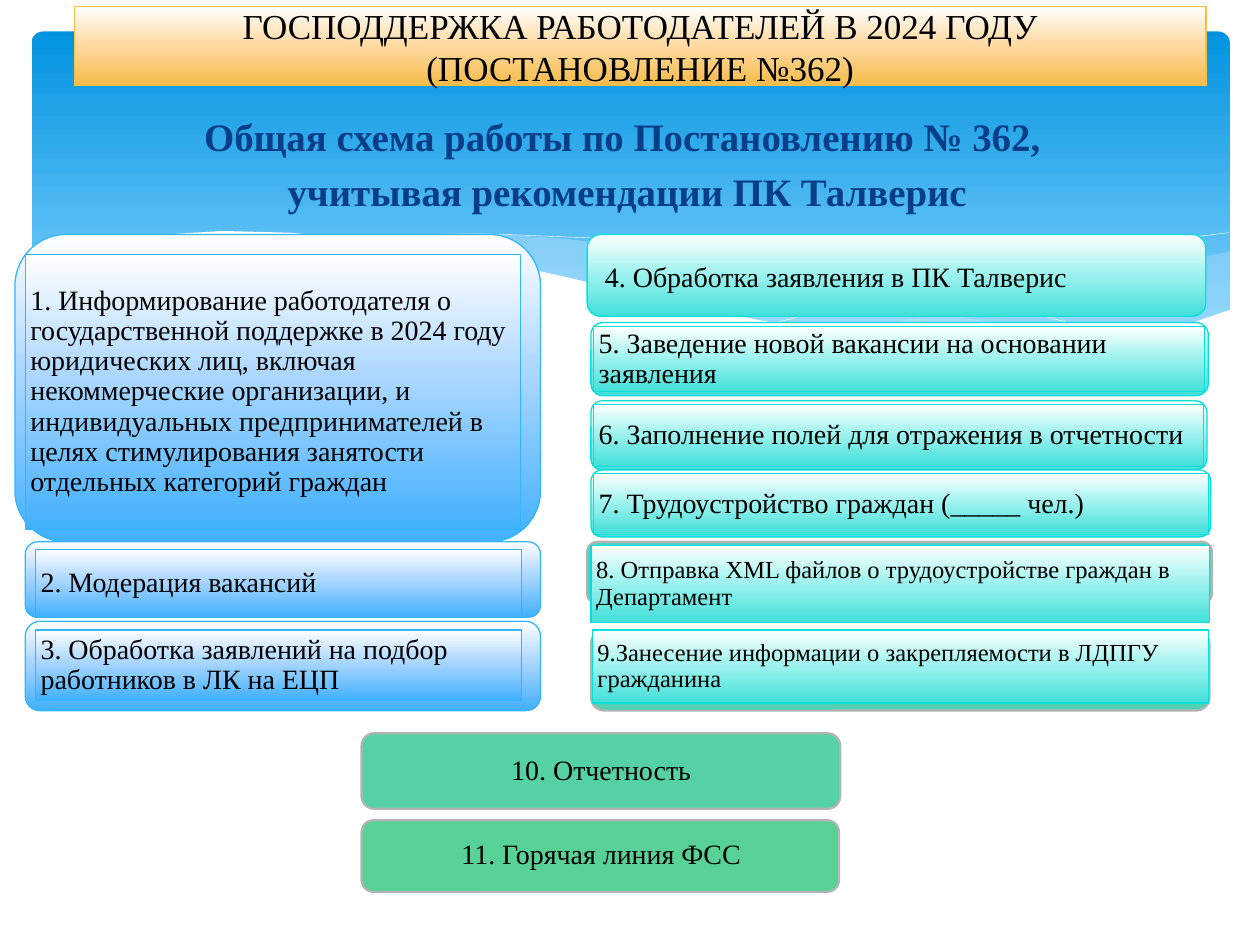
from copy import deepcopy
from dataclasses import dataclass

from pptx import Presentation
from pptx.dml.color import RGBColor
from pptx.enum import shapes as kinds, text as txt
from pptx.oxml import ns, xmlchemy
from pptx.util import Pt


@dataclass(frozen=True)
class Theme:
    font: str = "Times New Roman"
    ink: str = "000000"
    heading: str = "073E87"
    white: str = "FFFFFF"
    haze: str = "C6E7FC"
    sky: tuple = ((0, "0293E0"), (0.9, "83D3FE"))
    gold: tuple = ((0, "FFFFFF"), (0.44, "FFDDAA"), (1, "F4BB4A"))
    blue: tuple = ((0, "FFFFFF"), (0.44, "ACD7FF"), (1, "42B0FD"))
    aqua: tuple = ((0, "FFFFFF"), (0.44, "A5F4F0"), (1, "42DFD9"))
    gold_edge: str = "F5C040"
    blue_edge: str = "31B6FD"
    aqua_edge: str = "05E0DB"
    grey_edge: str = "B4B4B4"
    title_size: float = 20
    heading_size: float = 22.2
    step_size: float = 16
    small_size: float = 14
    thin: float = 0.75
    thick: float = 1.25


T = Theme()
BLUE = (T.blue, T.blue_edge, T.thin)
AQUA = (T.aqua, T.aqua_edge, T.thin)
LEFT, CENTER = txt.PP_ALIGN.LEFT, txt.PP_ALIGN.CENTER

# Backdrop outlines, in points
HAZE_RIGHT = [(702, 144), (662, 151), (620, 161), (561, 174), (508, 185), (476, 191),
              (518, 195), (562, 199.5), (594, 199.5), (628, 198), (657, 194), (678, 187),
              (703, 178), (703, 144)]
HAZE_MIDDLE = [(643, 197), (581, 187), (508, 173), (453, 160), (410, 150), (370, 142.5),
               (318, 136), (274, 133), (236, 134.5), (206, 137.5), (246, 143), (291, 152),
               (323, 160), (382, 173), (433, 184), (479, 191.5), (520, 197), (557, 199.5),
               (597, 200)]
CREST_LONG = [(222, 140), (248, 137), (289, 134.5), (338, 136), (384, 140), (438, 147),
              (500, 158), (572, 173.5), (653, 196)]
CREST_SHORT = [(441, 185), (484, 173.5), (539, 160.5), (602, 147), (644, 140), (702, 133)]
WHITE_WAVE = [(17, 153), (26, 149), (42, 144), (68, 137.5), (95, 134), (127, 132.5),
              (166, 133), (210, 137), (263, 145), (322, 158), (381, 172), (434, 183),
              (481, 191), (523, 196), (560, 199), (593, 199), (621, 197), (647, 193.5),
              (677, 186.5), (703, 177), (703, 237), (17, 237)]

# Steps: card box, card style, label box, label style (None = plain text), text, size, alignment
STEPS = [
    ((8.6, 134, 300.3, 175.6), BLUE, (14.4, 145.4, 283, 157), BLUE,
     "1. Информирование работодателя о государственной поддержке в 2024 году юридических лиц, "
     "включая некоммерческие организации, и индивидуальных предпринимателей в целях "
     "стимулирования занятости отдельных категорий граждан", T.step_size, LEFT),
    ((14.4, 309.6, 294.5, 43.2), BLUE, (20.2, 313.9, 277.9, 38.9), BLUE,
     "2. Модерация вакансий", T.step_size, LEFT),
    ((14.4, 355, 294.5, 51.1), BLUE, (20.2, 360, 277.9, 40.3), BLUE,
     "3. Обработка заявлений на подбор работников в ЛК на ЕЦП", T.step_size, LEFT),
    ((335.5, 134, 353.5, 46.8), AQUA, (342.7, 138.2, 350, 41.8), None,
     "4. Обработка заявления в ПК Талверис", T.step_size, LEFT),
    ((337.7, 184.3, 352.8, 41.8), AQUA, (339.1, 186.5, 349.2, 37.4), AQUA,
     "5. Заведение новой вакансии на основании заявления", T.step_size, LEFT),
    ((337.7, 229, 352, 39.6), AQUA, (339.1, 231.1, 348.5, 35.3), AQUA,
     "6. Заполнение полей для отражения в отчетности", T.step_size, LEFT),
    ((337.7, 268.6, 354.2, 38.2), AQUA, (339.1, 270.7, 351.4, 34.6), AQUA,
     "7. Трудоустройство граждан (_____ чел.)", T.step_size, LEFT),
    ((335.5, 309.6, 357.1, 35.3), ("50D1C5", T.grey_edge, T.thick),
     (337.7, 311.8, 353.5, 43.9), AQUA,
     "8. Отправка XML файлов о трудоустройстве граждан в Департамент", T.small_size, LEFT),
    ((337.7, 360, 353.5, 46.1), ("52D1B4", T.grey_edge, T.thick),
     (338.4, 360, 352.1, 41.8), AQUA,
     "9.Занесение информации о закрепляемости в ЛДПГУ гражданина", T.small_size, LEFT),
    ((206.6, 419, 273.6, 43.2), ("55D1A4", T.grey_edge, T.thick),
     (207.4, 421.2, 272.2, 38.9), None, "10. Отчетность", T.step_size, CENTER),
    ((206.6, 468.7, 272.9, 41), ("57D195", T.grey_edge, T.thick),
     (207.4, 470.2, 272.2, 36.7), None, "11. Горячая линия ФСС", T.step_size, CENTER),
]


def paint(shape, fill, edge=None, width=T.thin):
    """Fill with a colour, a top-down gradient or nothing, and set the outline."""
    if fill is None:
        shape.fill.background()
    elif isinstance(fill, str):
        shape.fill.solid()
        shape.fill.fore_color.rgb = RGBColor.from_string(fill)
    else:
        shape.fill.gradient()
        shape.fill.gradient_angle = 270
        stop_list = shape.element.spPr.find(".//" + ns.qn("a:gsLst"))
        for _ in fill[2:]:
            stop_list.insert(1, deepcopy(stop_list[0]))
        for stop, (position, colour) in zip(shape.fill.gradient_stops, fill):
            stop.position = position
            stop.color.rgb = RGBColor.from_string(colour)
    if edge:
        shape.line.color.rgb = RGBColor.from_string(edge)
        shape.line.width = Pt(width)
    else:
        shape.line.fill.background()


def add_panel(parent, kind, box, style):
    panel = parent.shapes.add_shape(kind, *map(Pt, box))
    panel.shadow.inherit = False
    paint(panel, *style)
    return panel


def add_outline(slide, points, fill=None, edge=None, opacity=None):
    builder = slide.shapes.build_freeform(*points[0], scale=Pt(1))
    builder.add_line_segments(points[1:], close=fill is not None)
    outline = builder.convert_to_shape()
    outline.shadow.inherit = False
    paint(outline, fill, edge, 0.25)
    if opacity:
        colour = outline.element.spPr.find(ns.qn("a:solidFill"))[0]
        alpha = xmlchemy.OxmlElement("a:alpha")
        alpha.set("val", str(opacity * 1000))
        colour.append(alpha)


def format_text(frame, size, colour, align, bold=False):
    frame.word_wrap = True
    frame.auto_size = txt.MSO_AUTO_SIZE.NONE
    for paragraph in frame.paragraphs:
        paragraph.alignment = align
        for run in paragraph.runs:
            run.font.name = T.font
            run.font.size = Pt(size)
            run.font.bold = bold
            run.font.color.rgb = RGBColor.from_string(colour)


def place(placeholder, box):
    """Move a placeholder and bring it in front of the backdrop."""
    placeholder.left, placeholder.top, placeholder.width, placeholder.height = map(Pt, box)
    placeholder.element.getparent().append(placeholder.element)


def add_backdrop(slide):
    sky = add_panel(slide, kinds.MSO_SHAPE.ROUNDED_RECTANGLE, (18, 18, 684.7, 194.4), (T.sky,))
    sky.adjustments[0] = 0.034
    add_outline(slide, HAZE_RIGHT, T.haze, opacity=29)
    add_outline(slide, HAZE_MIDDLE, T.haze, opacity=40)
    for crest in (CREST_LONG, CREST_SHORT):
        add_outline(slide, crest, edge=T.white)
    add_outline(slide, WHITE_WAVE, T.white)


def add_title(slide):
    title = slide.shapes.title
    place(title, (42.5, 3.6, 646.6, 45.4))
    paint(title, T.gold, T.gold_edge)
    frame = title.text_frame
    frame.text = "ГОСПОДДЕРЖКА РАБОТОДАТЕЛЕЙ В 2024 ГОДУ (ПОСТАНОВЛЕНИЕ №362)"
    frame.vertical_anchor = txt.MSO_ANCHOR.MIDDLE
    frame.margin_left = frame.margin_right = Pt(20)
    format_text(frame, T.title_size, T.ink, CENTER)


def add_heading(slide):
    heading = slide.placeholders[1]
    place(heading, (0, 60.5, 717.1, 59))
    frame = heading.text_frame
    frame.text = ("Общая схема работы по Постановлению № 362, \n"
                  "учитывая рекомендации ПК Талверис")
    format_text(frame, T.heading_size, T.heading, CENTER, bold=True)
    for paragraph in frame.paragraphs:
        paragraph.space_before = Pt(5)
        props = paragraph._p.get_or_add_pPr()
        props.set("marL", "0")
        props.set("indent", "0")
        props.append(xmlchemy.OxmlElement("a:buNone"))


def add_step(slide, card_box, card_style, label_box, label_style, words, size, align):
    step = slide.shapes.add_group_shape()
    add_panel(step, kinds.MSO_SHAPE.ROUNDED_RECTANGLE, card_box, card_style)
    if label_style:
        label = add_panel(step, kinds.MSO_SHAPE.RECTANGLE, label_box, label_style)
    else:
        label = step.shapes.add_textbox(*map(Pt, label_box))
    frame = label.text_frame
    frame.text = words
    frame.vertical_anchor = txt.MSO_ANCHOR.MIDDLE
    frame.margin_left = frame.margin_right = Pt(3)
    frame.margin_top = frame.margin_bottom = Pt(1.5)
    frame.paragraphs[0].line_spacing = 0.9
    format_text(frame, size, T.ink, align)


def main():
    deck = Presentation()
    deck.slide_width, deck.slide_height = Pt(720), Pt(540)
    slide = deck.slides.add_slide(deck.slide_layouts[1])
    add_backdrop(slide)
    add_title(slide)
    add_heading(slide)
    for step in STEPS:
        add_step(slide, *step)
    deck.save("out.pptx")


if __name__ == "__main__":
    main()
